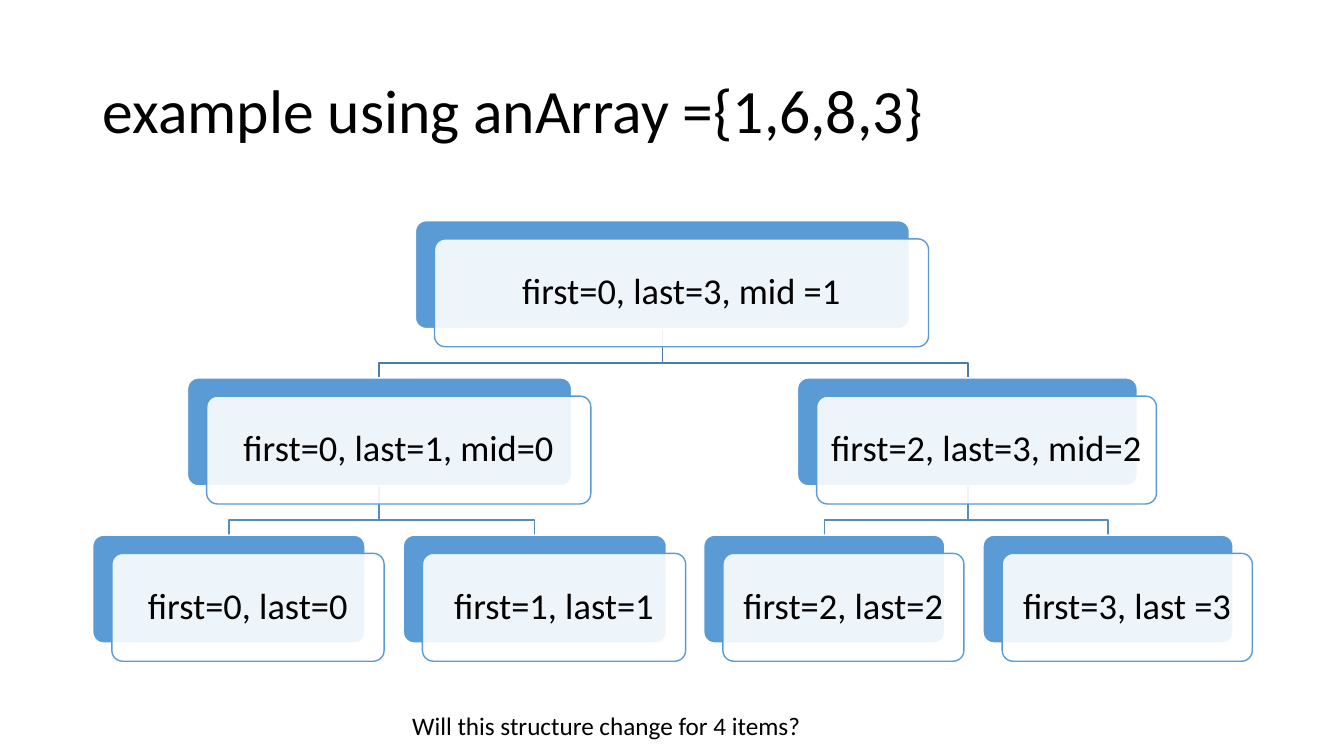
from lxml import etree
from pptx import Presentation
from pptx.dml.color import RGBColor
from pptx.enum.shapes import MSO_SHAPE
from pptx.enum.text import MSO_ANCHOR, PP_ALIGN
from pptx.oxml.ns import qn
from pptx.util import Emu, Pt

ROUND_RECT = MSO_SHAPE.ROUNDED_RECTANGLE
MIDDLE, TOP = MSO_ANCHOR.MIDDLE, MSO_ANCHOR.TOP
LEFT, CENTER = PP_ALIGN.LEFT, PP_ALIGN.CENTER

# Content
TITLE = "example using anArray ={1,6,8,3}"
QUESTION = "Will this structure change for 4 items?"
CALLS = [  # text, level, left, width, index of the parent call
    ("first=0, last=3, mid =1", 0, 412, 490, None),
    ("first=0, last=1, mid=0", 1, 186, 381, 0),
    ("first=0, last=0", 2, 92, 270, 1),
    ("first=1, last=1", 2, 400, 261, 1),
    ("first=2, last=3, mid=2", 1, 791, 337, 0),
    ("first=2, last=2", 2, 698, 239, 4),
    ("first=3, last =3", 2, 975, 248, 4),
]

# Layout in px, 100 to the inch
PX = 9144
TREE_TOP, LEVEL_STEP, BOX_H = 219, 156, 107
SHIFT_X, SHIFT_Y = 19, 18
ELBOW_DROP = 34
BLUE, WHITE, BLACK = "5B9BD5", "FFFFFF", "000000"
LINK_COLORS = {1: "497CAB", 2: "538DC1"}


def rgb(value):
    return RGBColor.from_string(value)


def px(*values):
    return [Emu(v * PX) for v in values]


def set_line(sp, color):
    sp.line.color.rgb = rgb(color)
    sp.line.width = Pt(1)
    sp.shadow.inherit = False


def write(sp, text, size, anchor=TOP, align=LEFT, wrap=False, spacing=1.0):
    tf = sp.text_frame
    tf.word_wrap, tf.vertical_anchor = wrap, anchor
    p = tf.paragraphs[0]
    p.alignment, p.line_spacing = align, spacing
    r = p.add_run()
    r.text = text
    for name, value in {"name": "Calibri", "size": Pt(size)}.items():
        setattr(r.font, name, value)
    r.font.color.rgb = rgb(BLACK)
    return tf


def add_box(shapes, left, top, width, fill, line):
    sp = shapes.add_shape(ROUND_RECT, *px(left, top, width, BOX_H))
    sp.adjustments[0] = 0.1
    sp.fill.solid()
    sp.fill.fore_color.rgb = rgb(fill)
    set_line(sp, line)
    return sp


def level_top(level):
    return TREE_TOP + level * LEVEL_STEP


def add_link(shapes, parent, child):
    _, parent_level, parent_left, parent_w, _ = parent
    _, level, left, width, _ = child
    x1, y1 = parent_left + parent_w / 2, level_top(parent_level) + BOX_H
    x2, y2 = left + width / 2, level_top(level)
    elbow = y1 + ELBOW_DROP
    outline = shapes.build_freeform(x1, y1, scale=PX)
    outline.add_line_segments([(x1, elbow), (x2, elbow), (x2, y2)], close=False)
    sp = outline.convert_to_shape()
    sp.fill.background()
    set_line(sp, LINK_COLORS[level])


def add_call(shapes, call):
    text, level, left, width, _ = call
    top = level_top(level)
    add_box(shapes, left, top, width, BLUE, WHITE)
    card = add_box(shapes, left + SHIFT_X, top + SHIFT_Y, width, WHITE, BLUE)
    color = card._element.spPr.xpath("a:solidFill/a:srgbClr")[0]
    etree.SubElement(color, qn("a:alpha")).set("val", "90000")
    tf = write(card, text, 26, MIDDLE, CENTER, spacing=0.9)
    for side in ("left", "right", "top", "bottom"):
        setattr(tf, f"margin_{side}", Emu(11 * PX))


def main():
    prs = Presentation()
    prs.slide_width, prs.slide_height = px(1333, 750)
    shapes = prs.slides.add_slide(prs.slide_layouts[6]).shapes

    # Title
    title = shapes.add_textbox(*px(92, 40, 1150, 145))
    write(title, TITLE, 44, MIDDLE, wrap=True, spacing=0.9)

    # Call tree: links behind, boxes in front
    for call in CALLS:
        if call[4] is not None:
            add_link(shapes, CALLS[call[4]], call)
    for call in CALLS:
        add_call(shapes, call)

    # Question
    write(shapes.add_textbox(*px(399, 700, 410, 40)), QUESTION, 18)

    prs.save("out.pptx")


if __name__ == "__main__":
    main()
